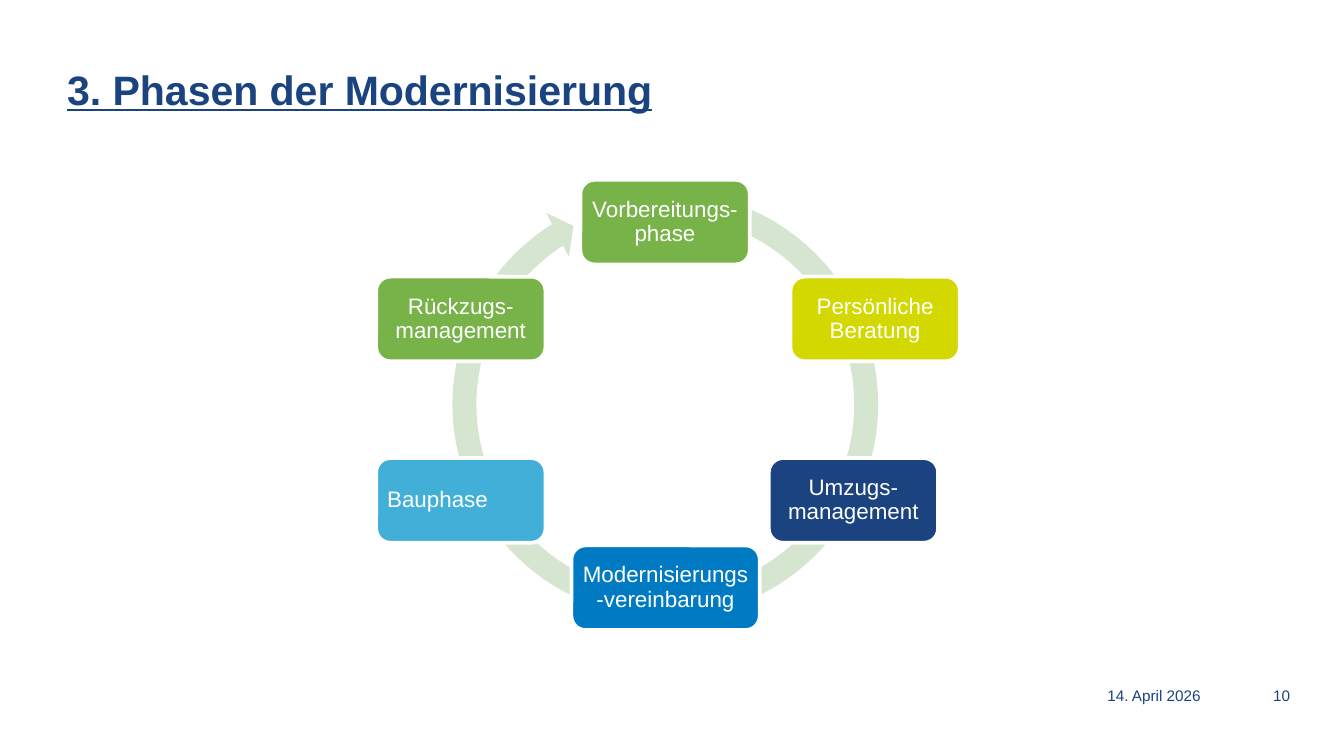
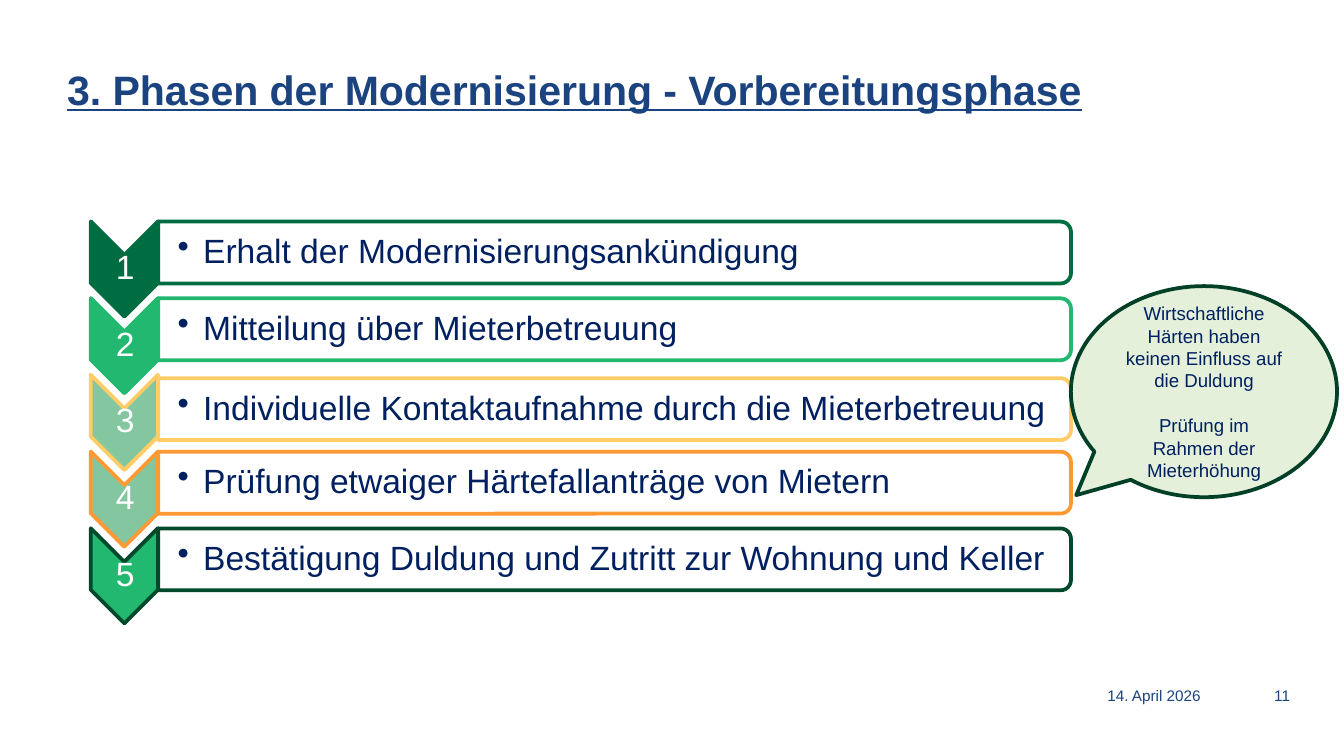
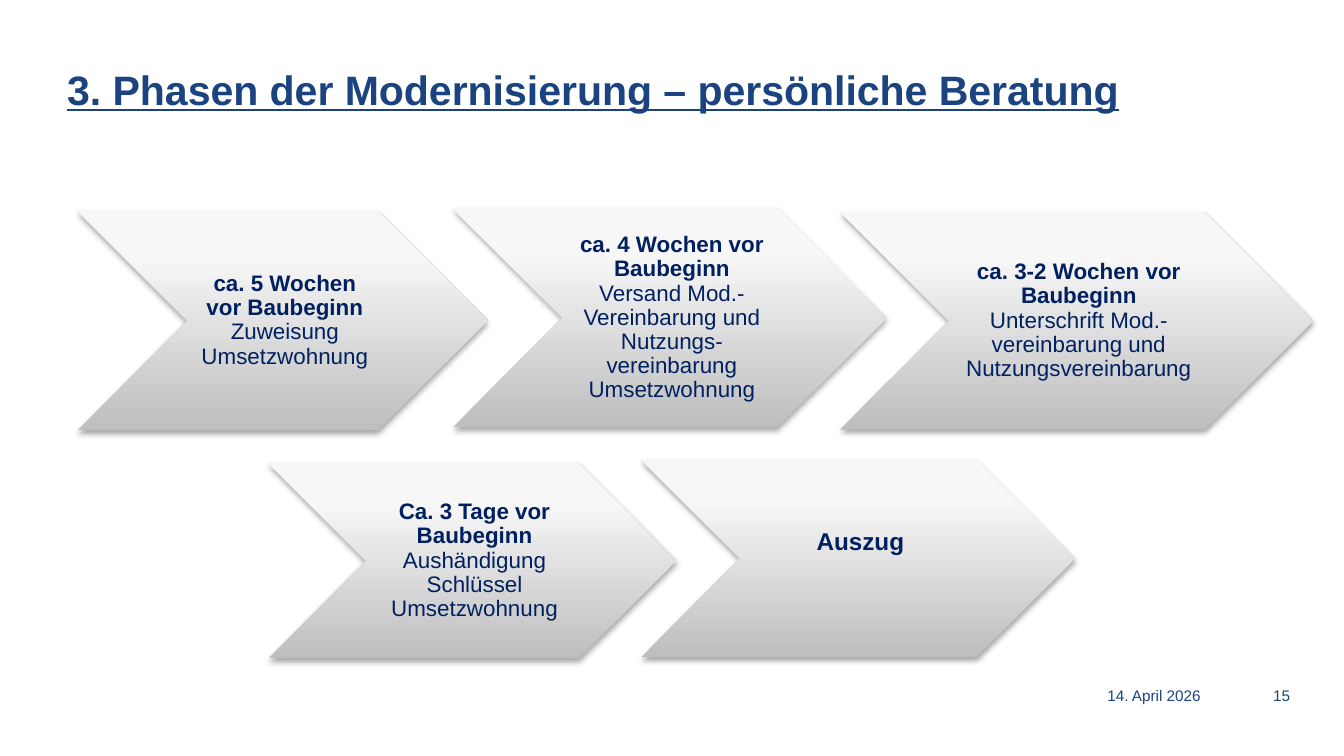
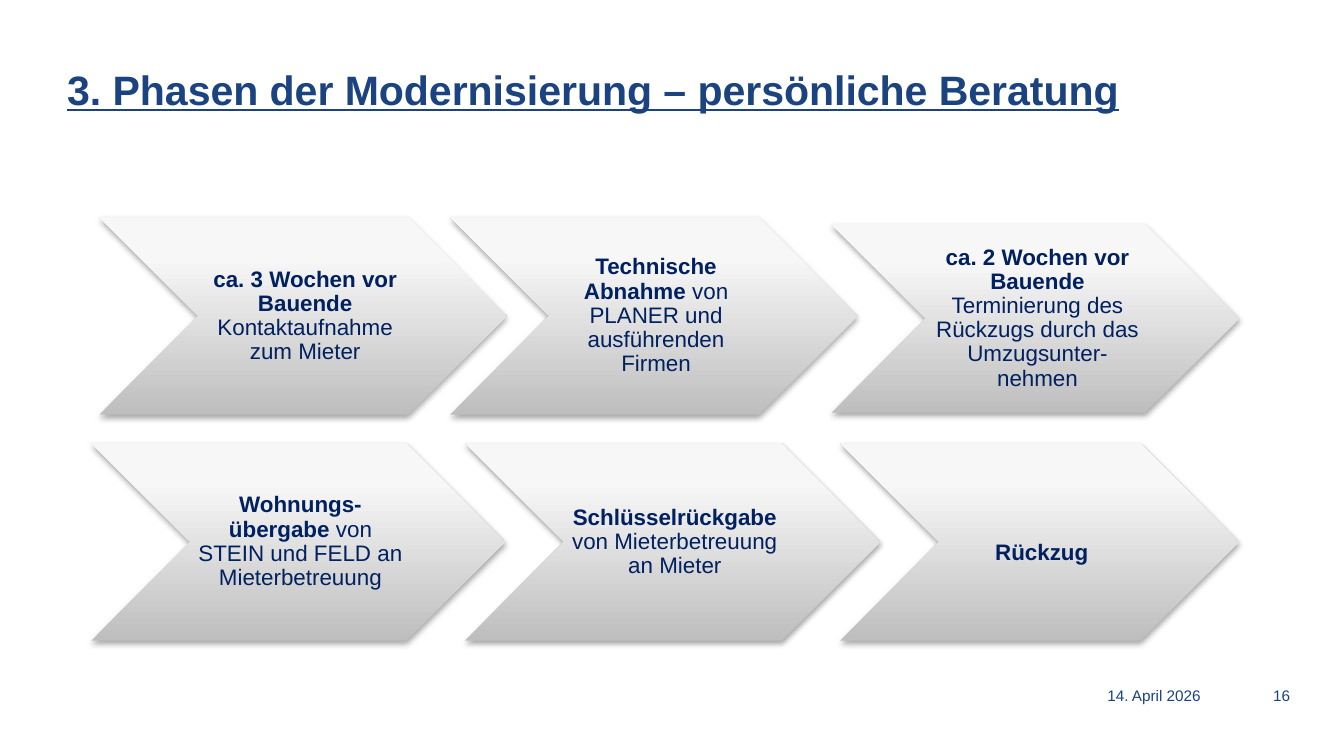
from lxml import etree
from pptx import Presentation
from pptx.dml.color import RGBColor
from pptx.enum.shapes import MSO_SHAPE
from pptx.enum.text import MSO_ANCHOR, PP_ALIGN
from pptx.oxml.ns import qn
from pptx.util import Cm, Pt

LEFT, MID, RIGHT = PP_ALIGN.LEFT, PP_ALIGN.CENTER, PP_ALIGN.RIGHT
MIDDLE = MSO_ANCHOR.MIDDLE
RING, ROUND = MSO_SHAPE.CIRCULAR_ARROW, MSO_SHAPE.ROUNDED_RECTANGLE
CHEVRON, BAR = MSO_SHAPE.CHEVRON, MSO_SHAPE.ROUND_2_SAME_RECTANGLE
BUBBLE = MSO_SHAPE.OVAL_CALLOUT

FONT = "Arial"
NAVY, INK, WHITE = "1A437F", "002060", "FFFFFF"
GREEN, MINT, SAGE = "77B349", "23B86F", "84C6A0"
DATE = "14. April 2026"
TOPIC = "3. Phasen der Modernisierung"
ADVICE = TOPIC + " – persönliche Beratung"

PHASES = [
    ((10.97, 3.4, 3.2, 1.6), GREEN, "Vorbereitungs-phase", MID),
    ((14.94, 5.23, 3.2, 1.6), "D3D800", "Persönliche Beratung", MID),
    ((14.53, 8.66, 3.2, 1.6), NAVY, "Umzugs-management", MID),
    ((10.8, 10.31, 3.56, 1.6), "007BC3", "Modernisierungs-vereinbarung", MID),
    ((7.11, 8.66, 3.2, 1.6), "41AFD8", "Bauphase", LEFT),
    ((7.11, 5.23, 3.2, 1.6), GREEN, "Rückzugs-management", MID),
]

TASKS = [
    ("006C41", "006C41", 0, "Erhalt der Modernisierungsankündigung"),
    (MINT, MINT, 0, "Mitteilung über Mieterbetreuung"),
    (SAGE, "FFCC66", 0.06,
     "Individuelle Kontaktaufnahme durch die Mieterbetreuung"),
    (SAGE, "FF9933", 0, "Prüfung etwaiger Härtefallanträge von Mietern"),
    (MINT, "00492C", 0,
     "Bestätigung Duldung und Zutritt zur Wohnung und Keller"),
]

BEFORE = [
    ((1.47, 3.99, 7.75, 4.14), "ca. 5 Wochen vor Baubeginn",
     "Zuweisung Umsetzwohnung"),
    ((8.56, 3.94, 8.2, 4.14), "ca. 4 Wochen vor Baubeginn",
     "Versand Mod.-Vereinbarung und Nutzungs-vereinbarung Umsetzwohnung"),
    ((15.88, 4.01, 8.94, 4.11), "ca. 3-2 Wochen vor Baubeginn",
     "Unterschrift Mod.-vereinbarung und Nutzungsvereinbarung"),
    ((5.08, 8.76, 7.7, 3.68), "Ca. 3 Tage vor Baubeginn",
     "Aushändigung Schlüssel Umsetzwohnung"),
]

AFTER = [
    ((1.88, 4.11, 7.7, 3.73), "ca. 3 Wochen vor Bauende",
     "Kontaktaufnahme zum Mieter"),
    ((15.72, 4.24, 7.7, 3.56), "ca. 2 Wochen vor Bauende",
     "Terminierung des Rückzugs durch das Umzugsunter-nehmen"),
    ((8.51, 4.11, 7.7, 3.73), "Technische Abnahme",
     " von PLANER und ausführenden Firmen"),
    ((1.73, 8.38, 7.82, 3.73), "Wohnungs-übergabe",
     " von STEIN und FELD an Mieterbetreuung"),
    ((8.79, 8.38, 7.85, 3.73), "Schlüsselrückgabe",
     " von Mieterbetreuung an Mieter"),
]


def color(code):
    """Turn a hex string into a colour."""
    return RGBColor.from_string(code)


def style(par, size, tone, align=LEFT, tight=True):
    """Set the font, alignment and line spacing of a paragraph."""
    par.alignment = align
    if tight:
        par.line_spacing = 0.9
    font = par.font
    font.name, font.size = FONT, Pt(size)
    font.color.rgb = color(tone)


def frame(shape, pads):
    """Prepare a centred, wrapping text frame and return it."""
    text = shape.text_frame
    text.word_wrap, text.vertical_anchor = True, MIDDLE
    (text.margin_left, text.margin_top,
     text.margin_right, text.margin_bottom) = map(Cm, pads)
    return text


def label(slide, box, words, size, tone, align=LEFT,
          pads=(0.03, 0.03, 0.03, 0.03), tight=True):
    """Add a one-paragraph text box and return the paragraph."""
    shape = slide.shapes.add_textbox(*map(Cm, box))
    par = frame(shape, pads).paragraphs[0]
    par.text = words
    style(par, size, tone, align, tight)
    return par


def solid(slide, kind, box, fill, line=None, turn=0):
    """Add a plain filled shape, with an outline if one is given."""
    shape = slide.shapes.add_shape(kind, *map(Cm, box))
    shape.shadow.inherit = False
    shape.rotation = turn
    shape.fill.solid()
    shape.fill.fore_color.rgb = color(fill)
    if line:
        shape.line.color.rgb = color(line)
        shape.line.width = Pt(2)
    else:
        shape.line.fill.background()
    return shape


def bullet(par):
    """Give a paragraph a hanging bullet."""
    props = par._p.get_or_add_pPr()
    props.set("marL", str(Cm(0.48)))
    props.set("indent", str(-Cm(0.48)))
    etree.SubElement(props, qn("a:buChar")).set("char", "•")


def shade(shape):
    """Give a shape the silver gradient and a soft shadow."""
    shape.fill.gradient()
    shape.fill.gradient_angle = 90
    stops = ((0, "BEBEBE"), (0.8, "F7F7F7"))
    for stop, (place, tone) in zip(shape.fill.gradient_stops, stops):
        stop.position = place
        stop.color.rgb = color(tone)
    effects = shape._element.spPr.find(qn("a:effectLst"))
    drop = etree.SubElement(effects, qn("a:outerShdw"), blurRad="40000",
                            dist="23000", dir="5400000", rotWithShape="0")
    black = etree.SubElement(drop, qn("a:srgbClr"), val="000000")
    etree.SubElement(black, qn("a:alpha"), val="35000")


def step(slide, box, head, body="", size=12, top=0.05, base=0.05):
    """Add a silver chevron with a bold head and a plain body."""
    shape = solid(slide, CHEVRON, box, WHITE)
    shade(shape)
    par = frame(shape, (0.13, top, 0.05, base)).paragraphs[0]
    style(par, size, INK, MID)
    run = par.add_run()
    run.text, run.font.bold = head, True
    if body:
        if not body.startswith(" "):
            par.add_line_break()
        par.add_run().text = body


def page(deck, title, number):
    """Add a slide with its title, date and page number."""
    slide = deck.slides.add_slide(deck.slide_layouts[6])
    par = label(slide, (1.02, 1.04, 23.11, 1.3), title, 22, NAVY,
                pads=(0.25, 0.13, 0.25, 0.13), tight=False)
    par.font.bold = par.font.underline = True
    label(slide, (18.16, 12.98, 4.78, 0.33), DATE, 8.2, NAVY, RIGHT,
          (0, 0.13, 0.25, 0.13), False)
    label(slide, (23.06, 12.98, 1.32, 0.33), str(number), 8.2, NAVY, RIGHT,
          (0.25, 0.13, 0, 0.13), False)
    return slide


def cycle(slide):
    """Draw the ring of phases."""
    ring = solid(slide, RING, (8.31, 3.38, 8.53, 8.53), "D6E5D0")
    for spot, pct in enumerate((5.3, 312.6, 14253.1, 17112.4, 5.5)):
        ring.adjustments[spot] = pct / 100
    for box, fill, words, align in PHASES:
        shape = solid(slide, ROUND, box, fill, WHITE)
        par = frame(shape, (0.13, 0.13, 0.13, 0.13)).paragraphs[0]
        par.text = words
        style(par, 12, WHITE, align)


def tasks(slide):
    """Draw the numbered list of tasks."""
    for row, (fill, line, nudge, words) in enumerate(TASKS):
        top = 4.45 + 1.45 * row
        solid(slide, CHEVRON, (1.45, top, 1.8, 1.27), fill, line, 90)
        label(slide, (1.73, top + 0.36, 1.27, 0.53), str(row + 1), 18,
              WHITE, MID)
        mid = top + 0.32 + nudge
        solid(slide, BAR, (11.03, mid - 8.62, 1.17, 17.25), WHITE, line, 90)
        par = label(slide, (3, mid - 0.53, 17.2, 1.07), "", 18, INK,
                    pads=(0.36, 0.03, 0.03, 0.03))
        par._p.remove(par._p.pPr)
        par.text = words
        bullet(par)
        style(par, 18, INK)


def bubble(slide):
    """Draw the speech bubble about hardship."""
    shape = solid(slide, BUBBLE, (20.24, 5.41, 5.03, 3.99), "E4F0DA",
                  "004027")
    shape.adjustments[0], shape.adjustments[1] = -0.48, 0.49
    text = frame(shape, (0.25, 0.13, 0.25, 0.13))
    text.text = ("Wirtschaftliche Härten haben keinen Einfluss auf die "
                 "Duldung\nPrüfung im Rahmen der Mieterhöhung")
    for par in text.paragraphs:
        style(par, 10, INK, MID, False)
    text.paragraphs[1].space_before = Pt(12)


def main():
    """Build and save the deck."""
    deck = Presentation()
    deck.slide_width, deck.slide_height = Cm(25.4), Cm(14.29)

    cycle(page(deck, TOPIC, 10))

    slide = page(deck, TOPIC + " - Vorbereitungsphase", 11)
    tasks(slide)
    bubble(slide)

    slide = page(deck, ADVICE, 15)
    for item in BEFORE:
        step(slide, *item)
    step(slide, (12.12, 8.69, 8.2, 3.73), "Auszug", size=13, base=0.63)

    slide = page(deck, ADVICE, 16)
    for item in AFTER:
        step(slide, *item)
    step(slide, (15.88, 8.38, 7.54, 3.73), "Rückzug", top=0.47)

    deck.save("out.pptx")


if __name__ == "__main__":
    main()
